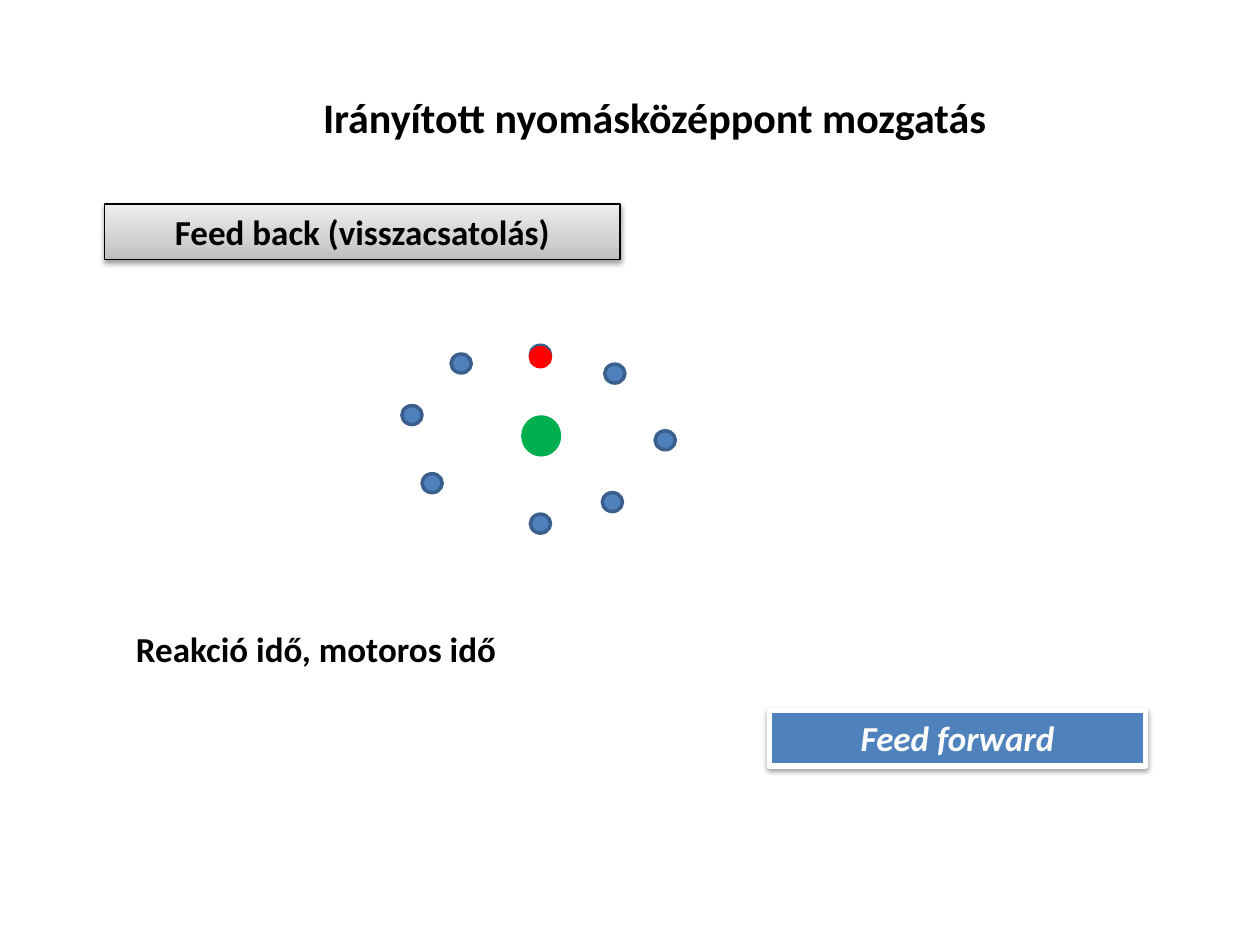
import dataclasses

import lxml.etree
import pptx
import pptx.dml.color
import pptx.enum.shapes
import pptx.enum.text
import pptx.oxml
import pptx.oxml.ns
import pptx.util

Pt = pptx.util.Pt
ALIGN = pptx.enum.text.PP_ALIGN
SHAPE = pptx.enum.shapes.MSO_SHAPE


@dataclasses.dataclass(frozen=True)
class Theme:
    font: str = "Calibri"
    title_size: int = 24
    label_size: int = 20
    black: str = "000000"
    white: str = "FFFFFF"
    blue: str = "4F81BD"
    dark_blue: str = "3A5F8C"
    red: str = "FF0000"
    green: str = "00B050"
    # Grey gradient, from the bottom up: (percent, colour)
    greys: tuple = ((0, "BDBDBD"), (35, "D1D1D1"), (100, "EEEEEE"))


THEME = Theme()
DOT_SIZE = (11.5, 10.8)
TARGETS = [
    (303.1, 197.3), (345.6, 208.1), (374.4, 246.2), (344.2, 281.5),
    (303.1, 293.8), (241.2, 270.7), (229.7, 231.8), (257.8, 202.3),
]


def rgb(color):
    return pptx.dml.color.RGBColor.from_string(color)


def set_text(sp, text, size, color, align=ALIGN.CENTER, italic=None):
    tf = sp.text_frame
    tf.word_wrap = True
    tf.auto_size = pptx.enum.text.MSO_AUTO_SIZE.SHAPE_TO_FIT_TEXT
    tf.vertical_anchor = pptx.enum.text.MSO_ANCHOR.TOP
    p = tf.paragraphs[0]
    p.text = text
    p.alignment = align
    p.font.name = THEME.font
    p.font.size = Pt(size)
    p.font.bold = True
    p.font.italic = italic
    p.font.color.rgb = rgb(color)


def add_text(s, box, text, size, align):
    sp = s.shapes.add_textbox(*map(Pt, box))
    set_text(sp, text, size, THEME.black, align)


def add_shape(s, kind, box, fill, line, width):
    sp = s.shapes.add_shape(kind, *map(Pt, box))
    sp.shadow.inherit = False
    sp.fill.solid()
    sp.fill.fore_color.rgb = rgb(fill)
    sp.line.color.rgb = rgb(line)
    sp.line.width = Pt(width)
    return sp


def add_dot(s, box, fill, line):
    add_shape(s, SHAPE.OVAL, box, fill, line, 2)


def add_shadow(sp):
    effects = sp._element.spPr.find(pptx.oxml.ns.qn("a:effectLst"))
    effects.append(pptx.oxml.parse_xml(
        f'<a:outerShdw {pptx.oxml.ns.nsdecls("a")} blurRad="{Pt(3.1)}" '
        f'dist="{Pt(1.6)}" dir="5400000" rotWithShape="0">'
        f'<a:srgbClr val="{THEME.black}"><a:alpha val="38000"/></a:srgbClr>'
        '</a:outerShdw>'))


def set_gradient(sp, stops):
    sp.fill.gradient()
    grad = sp._element.spPr.find(pptx.oxml.ns.qn("a:gradFill"))
    stop_list = grad.find(pptx.oxml.ns.qn("a:gsLst"))
    for stop in list(stop_list):
        stop_list.remove(stop)
    for percent, color in stops:
        stop = lxml.etree.SubElement(
            stop_list, pptx.oxml.ns.qn("a:gs"), pos=str(percent * 1000))
        lxml.etree.SubElement(stop, pptx.oxml.ns.qn("a:srgbClr"), val=color)
    grad.find(pptx.oxml.ns.qn("a:lin")).set("ang", "16200000")


def add_label(s, box, text, fill, line, width, color, italic=None):
    sp = add_shape(s, SHAPE.RECTANGLE, box, fill, line, width)
    add_shadow(sp)
    set_text(sp, text, THEME.label_size, color, italic=italic)
    return sp


def main():
    prs = pptx.Presentation()
    prs.slide_width, prs.slide_height = Pt(720), Pt(540)
    s = prs.slides.add_slide(prs.slide_layouts[6])

    # Title and feedback label
    add_text(s, (121.7, 49, 504.7, 36), "Irányított nyomásközéppont mozgatás",
             THEME.title_size, ALIGN.CENTER)
    feedback = add_label(s, (59.8, 116.6, 294.5, 31.7),
                         "Feed back (visszacsatolás)",
                         THEME.white, THEME.black, 0.75, THEME.black)
    set_gradient(feedback, THEME.greys)

    # Ring of targets, the active one in red, the centre in green
    for position in TARGETS:
        add_dot(s, position + DOT_SIZE, THEME.blue, THEME.dark_blue)
    add_dot(s, (303.1, 198.7) + DOT_SIZE, THEME.red, THEME.red)
    add_dot(s, (298.8, 238.3, 20.9, 21.6), THEME.green, THEME.green)

    # Measured times and feed-forward label
    add_text(s, (70.6, 355, 238.3, 31.7), "Reakció idő, motoros idő",
             THEME.label_size, ALIGN.LEFT)
    add_label(s, (439.9, 406.1, 214.6, 31.7), "Feed forward",
              THEME.blue, THEME.white, 3, THEME.white, italic=True)

    prs.save("out.pptx")


if __name__ == "__main__":
    main()
